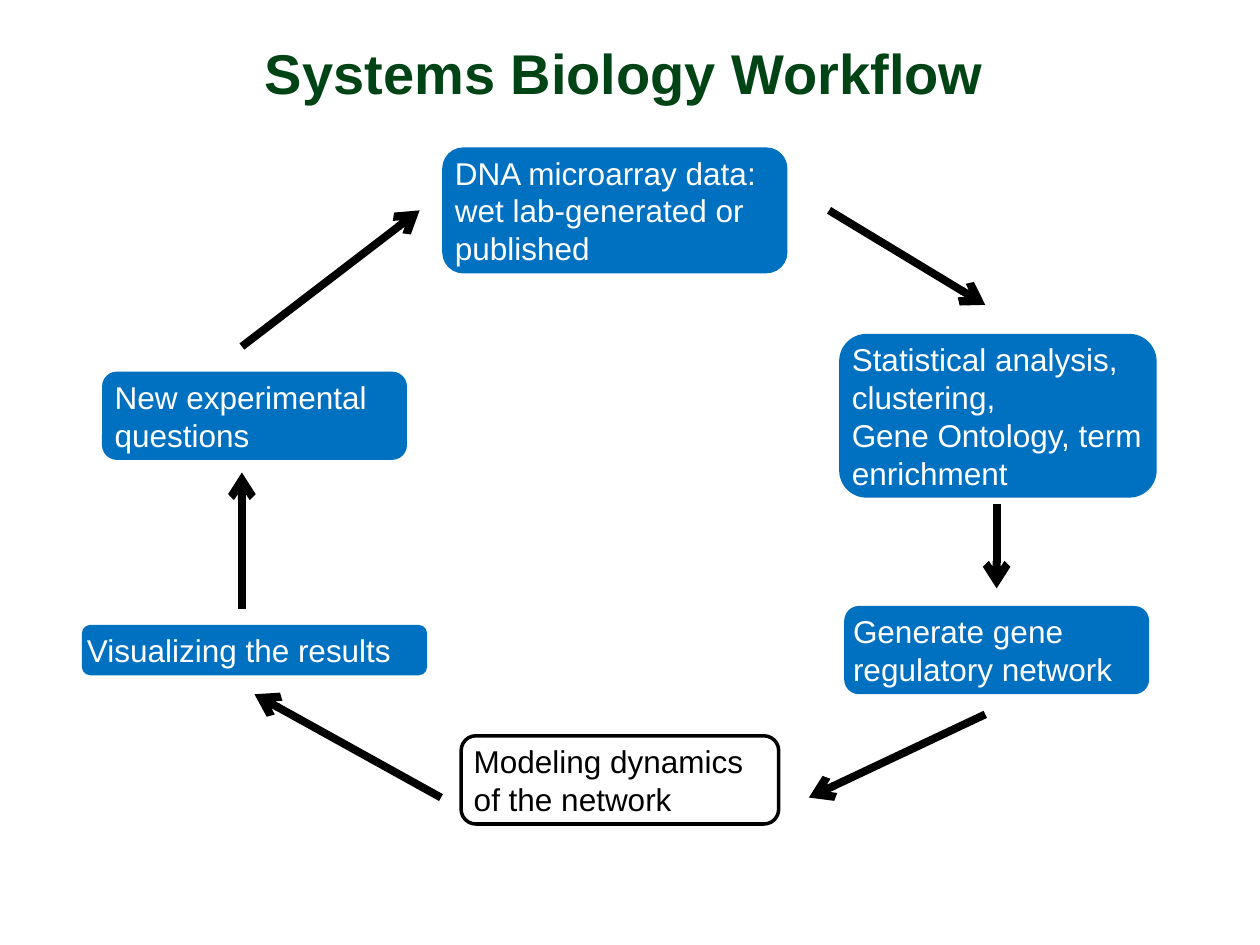
from lxml.etree import SubElement
from pptx import Presentation
from pptx.dml.color import RGBColor
from pptx.enum.shapes import MSO_CONNECTOR as Link, MSO_SHAPE as Preset
from pptx.enum.text import MSO_ANCHOR as Anchor, PP_ALIGN as Align
from pptx.oxml.ns import qn
from pptx.util import Inches, Pt

# Content: title, workflow steps clockwise, arrows between them
TITLE = "Systems Biology Workflow"

# centre x, centre y, width, lines of type, left text margin, style, paragraphs
STEPS = [
    (4.88, 1.67, 2.74, 3, 0.10, "filled",
     ["DNA microarray data:", "wet lab-generated or published"]),
    (7.92, 3.30, 2.52, 4, 0.10, "filled",
     ["Statistical analysis,", "clustering,", "Gene Ontology, term enrichment"]),
    (7.91, 5.16, 2.42, 2, 0.07, "filled", ["Generate gene regulatory network"]),
    (4.92, 6.19, 2.52, 2, 0.10, "outlined", ["Modeling dynamics of the network"]),
    (2.02, 5.16, 2.74, 1, 0.04, "filled", ["Visualizing the results"]),
    (2.02, 3.30, 2.42, 2, 0.10, "filled", ["New experimental questions"]),
]

ARROWS = [  # start x, start y, end x, end y
    (6.58, 1.67, 7.82, 2.42),
    (7.91, 4.00, 7.91, 4.67),
    (7.82, 5.67, 6.42, 6.33),
    (3.50, 6.33, 2.02, 5.51),
    (1.92, 4.83, 1.92, 3.75),
    (1.92, 2.75, 3.33, 1.67),
]

THEME = {
    "font": "Arial",
    "title": {"size": 32, "color": "004416", "bold": True},
    "filled": {"fill": "0070C0", "line": None,
               "text": {"size": 18, "color": "FFFFFF", "bold": False}},
    "outlined": {"fill": "FFFFFF", "line": "000000",
                 "text": {"size": 18, "color": "000000", "bold": False}},
    "outline_width": 2,
    "arrow": {"color": "000000", "width": 4.5},
}

LINE_HEIGHT, BASE_HEIGHT = 0.3, 0.1
CORNER = 0.167
CORNER_INSET = 0.29  # share of the corner radius kept clear of text
RIGHT_MARGIN = 0.1


def rgb(value):
    return RGBColor.from_string(value)


def write(frame, paragraphs, style, align, margins):
    frame.word_wrap = True
    frame.vertical_anchor = Anchor.MIDDLE
    for side, size in margins.items():
        setattr(frame, f"margin_{side}", Inches(size))
    for index, text in enumerate(paragraphs):
        para = frame.add_paragraph() if index else frame.paragraphs[0]
        para.alignment = align
        span = para.add_run()
        span.text = text
        formats = {"name": THEME["font"], "size": Pt(style["size"]),
                   "bold": style["bold"]}
        for name, value in formats.items():
            setattr(span.font, name, value)
        span.font.color.rgb = rgb(style["color"])


def add_step(page, x, y, width, lines, pad, style_name, paragraphs):
    style = THEME[style_name]
    height = BASE_HEIGHT + LINE_HEIGHT * lines
    box = page.shapes.add_shape(
        Preset.ROUNDED_RECTANGLE,
        *map(Inches, (x - width / 2, y - height / 2, width, height)))
    box.adjustments[0] = CORNER
    box.shadow.inherit = False
    box.fill.solid()
    box.fill.fore_color.rgb = rgb(style["fill"])
    if style["line"]:
        box.line.color.rgb = rgb(style["line"])
        box.line.width = Pt(THEME["outline_width"])
    else:
        box.line.fill.background()
    inset = CORNER * CORNER_INSET * height
    write(box.text_frame, paragraphs, style["text"], Align.LEFT,
          {"left": pad - inset, "right": RIGHT_MARGIN - inset,
           "top": 0, "bottom": 0})


def add_arrow(page, *ends):
    arrow = page.shapes.add_connector(Link.STRAIGHT, *map(Inches, ends))
    arrow.line.color.rgb = rgb(THEME["arrow"]["color"])
    arrow.line.width = Pt(THEME["arrow"]["width"])
    SubElement(arrow.line._get_or_add_ln(), qn("a:tailEnd"), type="arrow")
    SubElement(arrow._element.spPr, qn("a:effectLst"))


def main():
    deck = Presentation()
    deck.slide_width, deck.slide_height = Inches(10), Inches(7.5)
    page = deck.slides.add_slide(deck.slide_layouts[6])

    # Title
    title = page.shapes.add_textbox(*map(Inches, (1.08, 0.25, 7.75, 0.64)))
    write(title.text_frame, [TITLE], THEME["title"], Align.CENTER,
          {"left": 0.1, "right": 0.1, "top": 0.05, "bottom": 0.05})

    # Workflow cycle
    for step in STEPS:
        add_step(page, *step)
    for ends in ARROWS:
        add_arrow(page, *ends)

    deck.save("out.pptx")


if __name__ == "__main__":
    main()
